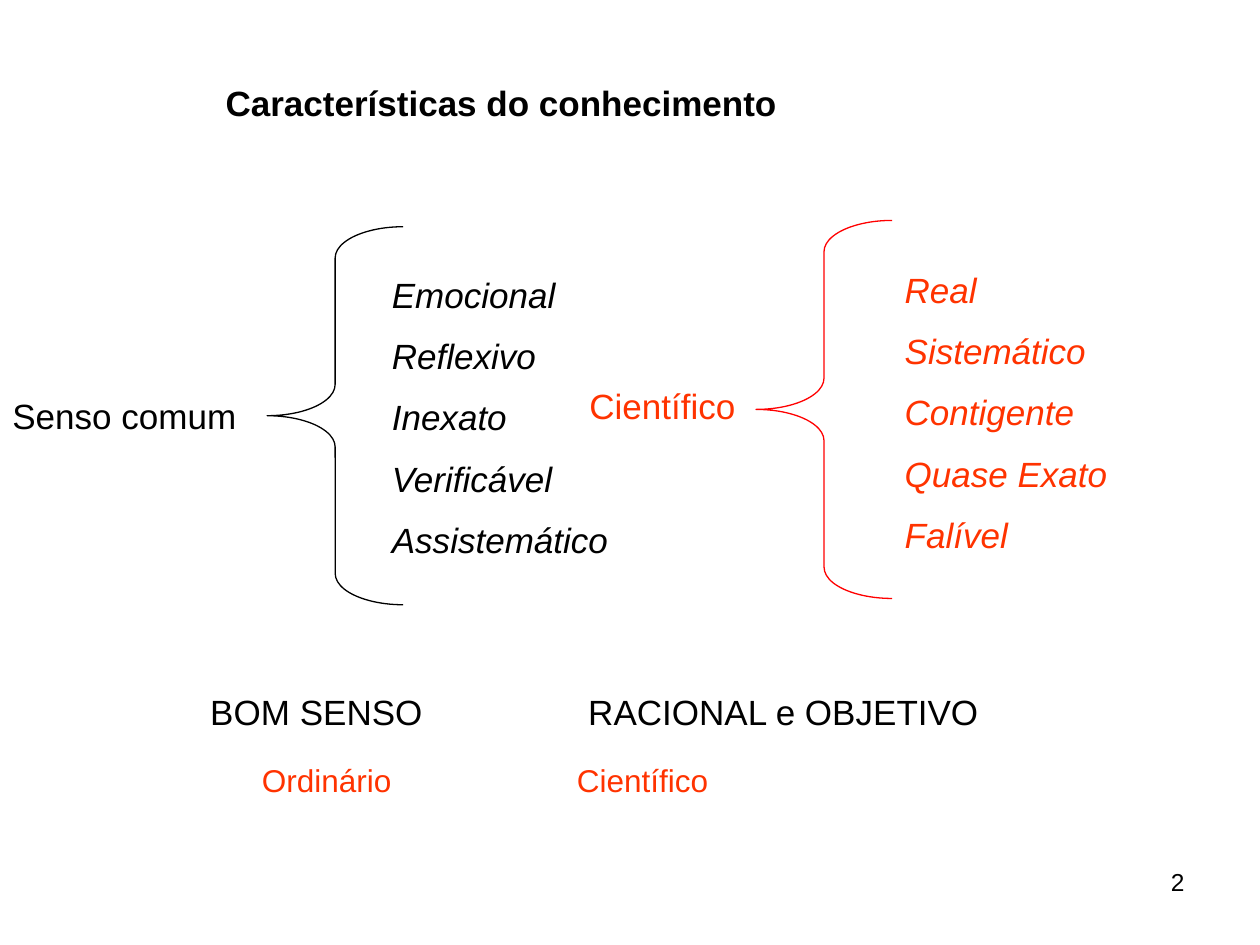
"""Build a slide contrasting common-sense and scientific knowledge."""
from dataclasses import dataclass

from lxml import etree
from pptx import Presentation
from pptx.dml.color import RGBColor
from pptx.enum.shapes import MSO_SHAPE
from pptx.enum.text import MSO_ANCHOR, MSO_AUTO_SIZE, PP_ALIGN
from pptx.oxml.ns import qn
from pptx.util import Inches, Pt

LEFT_BRACE = MSO_SHAPE.LEFT_BRACE
TOP = MSO_ANCHOR.TOP
NO_AUTOFIT = MSO_AUTO_SIZE.NONE
LEFT, RIGHT = PP_ALIGN.LEFT, PP_ALIGN.RIGHT
TWO_CONTENT_LAYOUT = 3
FONT = "Arial"
COLORS = {"black": "000000", "orange": "FF3300", "red": "FF0000"}


@dataclass
class Label:
    """A single line of text and its box in inches."""
    text: str
    box: tuple[float, float, float, float]
    color: str = "black"
    size: int = 20
    align: PP_ALIGN = LEFT


@dataclass
class Knowledge:
    """A kind of knowledge, its brace and its traits."""
    name: Label
    brace_at: tuple[float, float]
    brace_color: str
    traits_at: tuple[float, float]
    traits: list[str]


TITLE = Label("Características do conhecimento", (1.69, 0.6, 7.17, 0.43))
KINDS = [
    Knowledge(Label("Senso comum", (0, 3.08, 2.67, 0.43)),
              (2.12, 1.8), "black", (3.01, 2.12),
              ["Emocional", "Reflexivo", "Inexato", "Verificável", "Assistemático"]),
    Knowledge(Label("Científico", (4.58, 3, 2.67, 0.43), "orange"),
              (6, 1.75), "red", (7.08, 2.08),
              ["Real", "Sistemático", "Contigente", "Quase Exato", "Falível"]),
]
FOOTERS = [
    Label("BOM SENSO\t\t\tRACIONAL e OBJETIVO", (1.57, 5.43, 7.42, 0.43)),
    Label("Ordinário\t\t\tCientífico", (1.98, 5.99, 7, 0.4), "orange", 18),
    Label("2", (7.17, 6.83, 2.33, 0.52), size=14, align=RIGHT),
]


def place(shape, box: tuple[float, float, float, float]) -> None:
    """Move and size a shape."""
    shape.left, shape.top, shape.width, shape.height = map(Inches, box)


def write(shape, label: Label, bold: bool = False, italic: bool = False) -> None:
    """Place a text shape and format its paragraphs."""
    place(shape, label.box)
    text_frame = shape.text_frame
    text_frame.text = label.text
    text_frame.word_wrap = True
    text_frame.auto_size = NO_AUTOFIT
    text_frame.vertical_anchor = TOP
    for index, paragraph in enumerate(text_frame.paragraphs):
        paragraph.alignment = label.align
        paragraph.space_before = Pt(11 if index else 0)
        for run in paragraph.runs:
            font = run.font
            font.name, font.size = FONT, Pt(label.size)
            font.bold, font.italic = bold, italic
            font.color.rgb = RGBColor.from_string(COLORS[label.color])


def add_label(slide, label: Label) -> None:
    """Add a text box."""
    write(slide.shapes.add_textbox(0, 0, 0, 0), label)


def add_brace(slide, left: float, top: float, color: str) -> None:
    """Add an unfilled left brace."""
    brace = slide.shapes.add_shape(
        LEFT_BRACE, Inches(left), Inches(top), Inches(1.08), Inches(3))
    brace.adjustments[0] = 0.23
    brace.shadow.inherit = False
    brace.fill.background()
    brace.line.color.rgb = RGBColor.from_string(COLORS[color])
    brace.line.width = Pt(0.75)


def fill_traits(placeholder, kind: Knowledge) -> None:
    """Write the traits as an unbulleted list."""
    box = (*kind.traits_at, 2.42, 2.43)
    write(placeholder, Label("\n".join(kind.traits), box, kind.name.color), italic=True)
    for paragraph in placeholder.text_frame.paragraphs:
        properties = paragraph._p.get_or_add_pPr()
        properties.set("marL", "0")
        properties.set("indent", "0")
        etree.SubElement(properties, qn("a:buNone"))


def main() -> None:
    """Build and save the presentation."""
    presentation = Presentation()
    presentation.slide_width, presentation.slide_height = Inches(10), Inches(7.5)
    slide = presentation.slides.add_slide(
        presentation.slide_layouts[TWO_CONTENT_LAYOUT])
    write(slide.shapes.title, TITLE, bold=True)
    for index, kind in enumerate(KINDS, start=1):
        add_label(slide, kind.name)
        add_brace(slide, *kind.brace_at, kind.brace_color)
        fill_traits(slide.placeholders[index], kind)
    for footer in FOOTERS:
        add_label(slide, footer)
    presentation.save("out.pptx")


if __name__ == "__main__":
    main()
